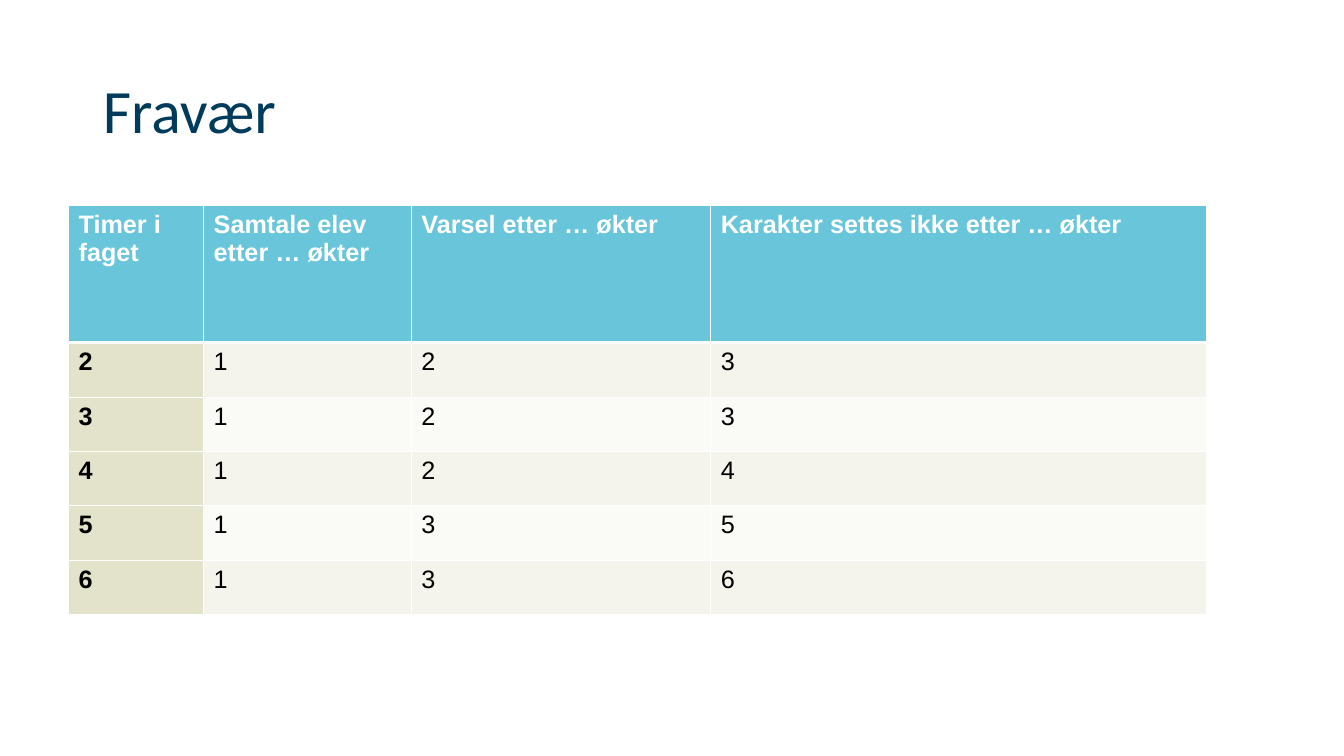
from lxml.etree import SubElement
from pptx import Presentation
from pptx.dml.color import RGBColor
from pptx.enum.text import MSO_ANCHOR, PP_ALIGN
from pptx.oxml.ns import qn
from pptx.util import Inches, Pt

COLORS = {
    "title": "003B5C",
    "header": "68C5DA",
    "first_column": "E3E3CC",
    "odd_row": "F4F4EC",
    "even_row": "FAFAF6",
    "white": "FFFFFF",
    "black": "000000",
}
HEADINGS = ["Timer i faget", "Samtale elev etter … økter",
            "Varsel etter … økter", "Karakter settes ikke etter … økter"]
LIMITS = [(2, 1, 2, 3), (3, 1, 2, 3), (4, 1, 2, 4), (5, 1, 3, 5), (6, 1, 3, 6)]
COLUMN_WIDTHS = [1.34, 2.06, 2.97, 4.92]
HEADER_HEIGHT, ROW_HEIGHT = 1.36, 0.54
THIN, THICK = 0.75, 2.09


class AbsenceSlide:
    def __init__(self, deck):
        self.page = deck.slides.add_slide(deck.slide_layouts[5])

    def add_text(self, frame, text, color, **formats):
        paragraph = frame.paragraphs[0]
        paragraph.alignment = PP_ALIGN.LEFT
        span = paragraph.add_run()
        span.text = text
        span.font.color.rgb = RGBColor.from_string(COLORS[color])
        for name, value in formats.items():
            setattr(span.font, name, value)
        return paragraph

    def title(self, text, left, top, width, height):
        box = self.page.shapes.title
        places = {"left": left, "top": top, "width": width, "height": height}
        for name, value in places.items():
            setattr(box, name, Inches(value))
        box.text_frame.vertical_anchor = MSO_ANCHOR.MIDDLE
        paragraph = self.add_text(box.text_frame, text, "title", name="Calibri", size=Pt(44))
        paragraph.line_spacing = 0.9

    def borders(self, cell, widths):
        """Draw white cell borders; widths maps L, R, T and B to points."""
        properties = cell._tc.get_or_add_tcPr()
        for side, width in widths.items():
            line = SubElement(properties, qn(f"a:ln{side}"), w=str(Pt(width)))
            fill = SubElement(line, qn("a:solidFill"))
            SubElement(fill, qn("a:srgbClr"), val=COLORS["white"])

    def cell(self, cell, text, row, column):
        if row == 0:
            fill = "header"
        elif column == 0:
            fill = "first_column"
        else:
            fill = "odd_row" if row % 2 else "even_row"
        self.borders(cell, {"L": THIN, "R": THIN,
                            "T": THICK if row == 1 else THIN,
                            "B": THICK if row == 0 else THIN})
        cell.fill.solid()
        cell.fill.fore_color.rgb = RGBColor.from_string(COLORS[fill])
        self.add_text(cell.text_frame, text, "black" if row else "white",
                      name="Arial", size=Pt(18), bold=row == 0 or column == 0)

    def table(self, rows, left, top):
        heights = [HEADER_HEIGHT] + [ROW_HEIGHT] * (len(rows) - 1)
        table = self.page.shapes.add_table(
            len(rows), len(COLUMN_WIDTHS), Inches(left), Inches(top),
            Inches(sum(COLUMN_WIDTHS)), Inches(sum(heights))).table
        table.first_col = True
        for column, width in zip(table.columns, COLUMN_WIDTHS):
            column.width = Inches(width)
        for row, height in zip(table.rows, heights):
            row.height = Inches(height)
        for row, values in enumerate(rows):
            for column, value in enumerate(values):
                self.cell(table.cell(row, column), str(value), row, column)


def main():
    deck = Presentation()
    deck.slide_width, deck.slide_height = Inches(13.33), Inches(7.5)
    slide = AbsenceSlide(deck)
    slide.title("Fravær", 0.92, 0.4, 11.5, 1.45)
    slide.table([HEADINGS, *LIMITS], 0.68, 2.04)
    deck.save("out.pptx")


if __name__ == "__main__":
    main()
